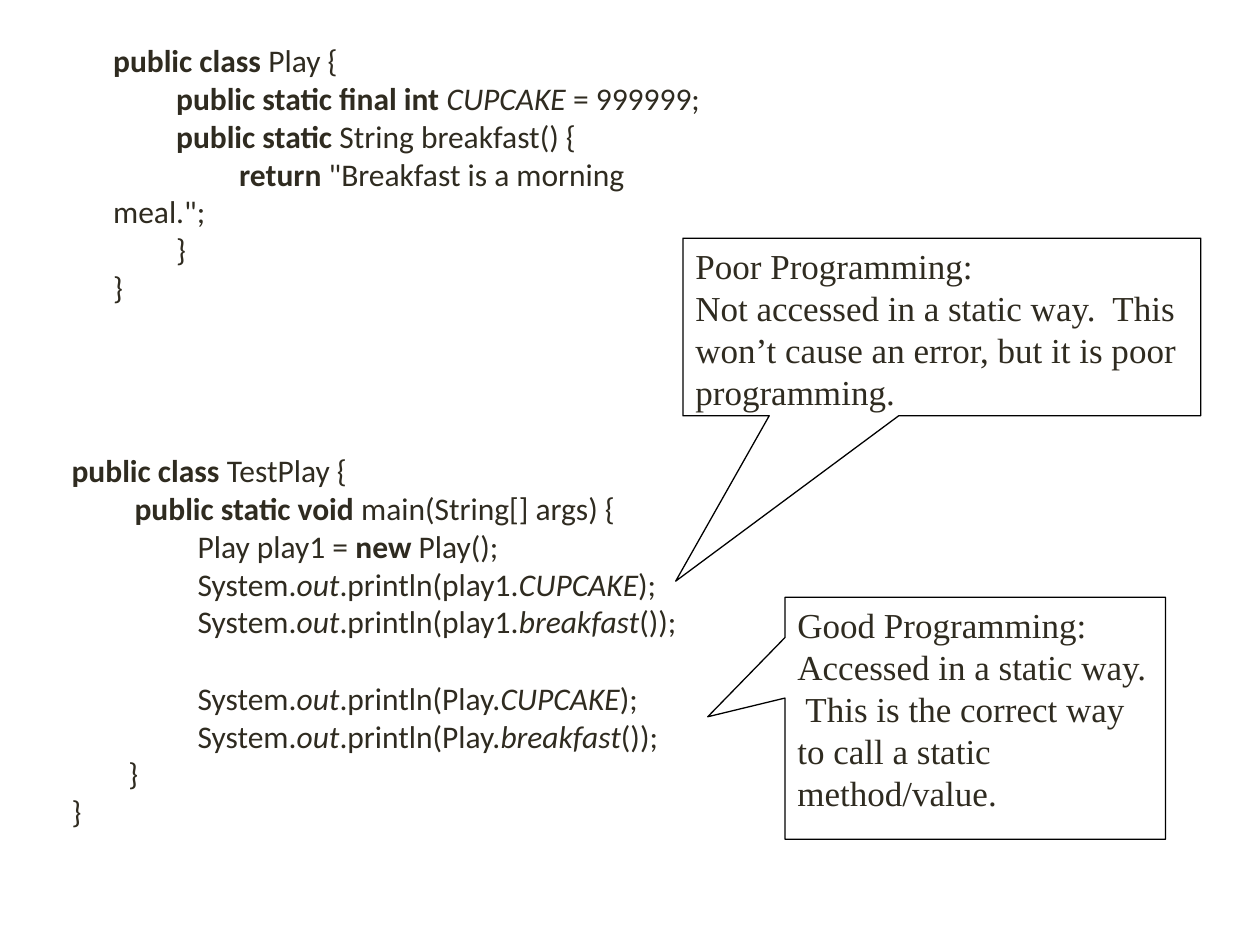
from pptx import Presentation
from pptx import util as u
from pptx.dml import color
from pptx.enum import shapes, text

COLORS = {"ink": "2F2B20", "paper": "FFFFFF", "outline": "000000"}
WIDTH, HEIGHT = 10, 7.5
TAB = 0.5
BLANK_LINE = 22

PLAIN, BOLD, ITALIC = {}, {"bold": True}, {"italic": True}
CODE_FONT = {"name": "Calibri", "size": u.Pt(18)}
NOTE_FONT = {"name": "Times New Roman", "size": u.Pt(20)}


def print_call(owner, member, ending):
    return [("System.", PLAIN), ("out", ITALIC), (f".println({owner}.", PLAIN),
            (member, ITALIC), (ending, PLAIN)]


def print_calls(owner, gap):
    return [(2, gap, print_call(owner, "CUPCAKE", ");")),
            (2, 0, print_call(owner, "breakfast", "());"))]


PLAY_CLASS = [
    (0, 0, [("public class", BOLD), (" Play {", PLAIN)]),
    (1, 0, [("public static final int ", BOLD), ("CUPCAKE", ITALIC), (" = 999999;", PLAIN)]),
    (1, 0, [("public static", BOLD), (" String breakfast() {", PLAIN)]),
    (2, 0, [("return", BOLD), (' "Breakfast is a morning meal.";', PLAIN)]),
    (1, 0, [("}", PLAIN)]),
    (0, 0, [("}", PLAIN)]),
]
TEST_CLASS = [
    (0, 0, [("public class ", BOLD), ("TestPlay {", PLAIN)]),
    (1, 0, [("public static void", BOLD), (" main(String[] args) {", PLAIN)]),
    (2, 0, [("Play play1 = ", PLAIN), ("new", BOLD), (" Play();", PLAIN)]),
    *print_calls("play1", 0),
    *print_calls("Play", BLANK_LINE),
    (0.9, 0, [("}", PLAIN)]),
    (0, 0, [("}", PLAIN)]),
]
LISTINGS = [
    ((0.08, 0.037, 0.5, 0.256), PLAY_CLASS),
    ((0.047, 0.471, 0.658, 0.417), TEST_CLASS),
]
CALLOUTS = [
    ((0.542, 0.252, 0.411, 0.188), (-0.514, 1.431),
     ["Poor Programming:",
      "Not accessed in a static way.  This won’t cause an error, but it is poor programming."]),
    ((0.623, 0.632, 0.302, 0.256), (-0.703, -0.006),
     ["Good Programming:",
      "Accessed in a static way.  This is the correct way to call a static method/value."]),
]


def place(shares):
    return [u.Inches(share * side) for share, side in zip(shares, (WIDTH, HEIGHT) * 2)]


def rgb(key):
    return color.RGBColor.from_string(COLORS[key])


def write(frame, lines, font_format):
    frame.word_wrap = True
    frame.vertical_anchor = text.MSO_ANCHOR.TOP
    for number, (tabs, gap, runs) in enumerate(lines):
        line = frame.add_paragraph() if number else frame.paragraphs[0]
        line.alignment = text.PP_ALIGN.LEFT
        line.space_before = u.Pt(gap)
        line_format = line._p.get_or_add_pPr()
        line_format.set("marL", "0")
        line_format.set("indent", str(u.Inches(tabs * TAB)))
        for words, emphasis in runs:
            run = line.add_run()
            run.text = words
            for name, value in {**font_format, **emphasis}.items():
                setattr(run.font, name, value)
            run.font.color.rgb = rgb("ink")


def main():
    deck = Presentation()
    deck.slide_width, deck.slide_height = u.Inches(WIDTH), u.Inches(HEIGHT)
    slide = deck.slides.add_slide(deck.slide_layouts[6])

    for shares, lines in LISTINGS:
        listing = slide.shapes.add_textbox(*place(shares))
        write(listing.text_frame, lines, CODE_FONT)
        listing.text_frame.auto_size = text.MSO_AUTO_SIZE.SHAPE_TO_FIT_TEXT

    for shares, tip, sentences in CALLOUTS:
        callout = slide.shapes.add_shape(
            shapes.MSO_SHAPE.RECTANGULAR_CALLOUT, *place(shares))
        for index, offset in enumerate(tip):
            callout.adjustments[index] = offset
        callout.shadow.inherit = False
        callout.fill.solid()
        callout.fill.fore_color.rgb = rgb("paper")
        callout.line.color.rgb = rgb("outline")
        callout.line.width = u.Pt(0.75)
        write(callout.text_frame, [(0, 0, [(words, PLAIN)]) for words in sentences], NOTE_FONT)

    deck.save("out.pptx")


if __name__ == "__main__":
    main()
